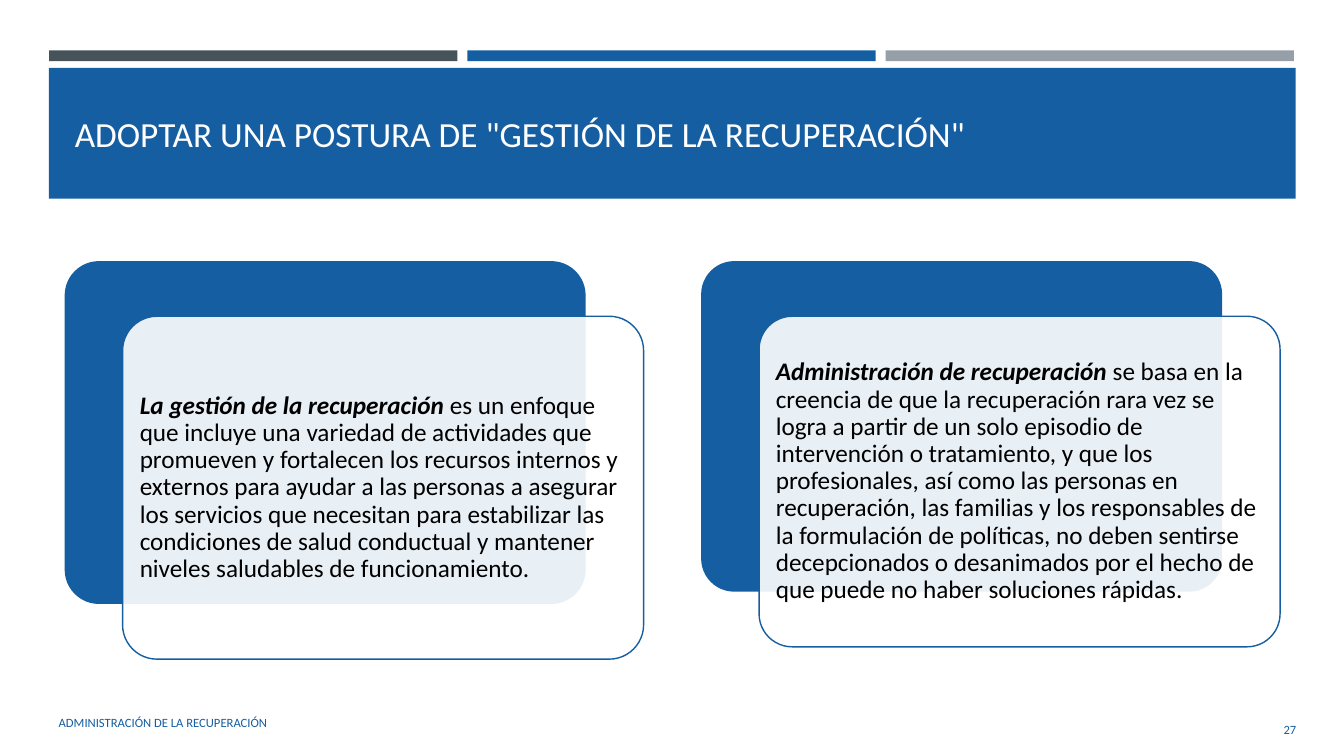
"""Builds the slide on adopting a recovery management stance."""
from lxml import etree
from pptx import Presentation
from pptx import util as u
from pptx.dml.color import RGBColor
from pptx.enum import shapes, text
from pptx.oxml.ns import qn

TITLE = 'ADOPTAR UNA POSTURA DE "GESTIÓN DE LA RECUPERACIÓN"'
FOOTER = "ADMINISTRACIÓN DE LA RECUPERACIÓN"
NUMBER = "27"
CARDS = [
    ("La gestión de la recuperación ",
     "es un enfoque que incluye una variedad de actividades que promueven y "
     "fortalecen los recursos internos y externos para ayudar a las personas a "
     "asegurar los servicios que necesitan para estabilizar las condiciones de "
     "salud conductual y mantener niveles saludables de funcionamiento.", 8.64),
    ("Administración de recuperación ",
     "se basa en la creencia de que la recuperación rara vez se logra a partir de "
     "un solo episodio de intervención o tratamiento, y que los profesionales, así "
     "como las personas en recuperación, las familias y los responsables de la "
     "formulación de políticas, no deben sentirse decepcionados o desanimados por "
     "el hecho de que puede no haber soluciones rápidas.", 8.33),
]
COLORS = {"blue": "155EA1", "slate": "465359", "gray": "969FA7",
          "white": "FFFFFF", "black": "000000"}
BARS = ["slate", "blue", "gray"]
BAR_LEFT, BAR_WIDTH, BAR_STEP = 1.24, 10.29, 10.54
CARD_LEFT, CARD_TOP, CARD_WIDTH, CARD_STEP = 1.63, 6.58, 13.13, 16.04
SHIFT_X, SHIFT_Y = 1.46, 1.39


def color(name):
    return RGBColor.from_string(COLORS[name])


def lengths(*values):
    return [u.Cm(value) for value in values]


def add_block(page, kind, place, fill):
    block = page.shapes.add_shape(kind, *lengths(*place))
    block.shadow.inherit = False
    block.fill.solid()
    block.fill.fore_color.rgb = color(fill)
    block.line.fill.background()
    return block


def write(box, spans, size=18, ink="black", align=text.PP_ALIGN.LEFT,
          spacing=1.0, margin=None):
    frame = box.text_frame
    frame.word_wrap = True
    frame.auto_size = text.MSO_AUTO_SIZE.NONE
    frame.vertical_anchor = text.MSO_ANCHOR.MIDDLE
    if margin is not None:
        frame.margin_left = frame.margin_right = u.Cm(margin)
        frame.margin_top = frame.margin_bottom = u.Cm(margin)
    para = frame.paragraphs[0]
    para.alignment = align
    para.line_spacing = spacing
    for words, strong in spans:
        span = para.add_run()
        span.text = words
        span.font.name = "Calibri"
        span.font.size = u.Pt(size)
        span.font.bold = span.font.italic = strong
        span.font.color.rgb = color(ink)


def add_card(page, index, lead, body, height):
    left = CARD_LEFT + index * CARD_STEP
    rounded = shapes.MSO_SHAPE.ROUNDED_RECTANGLE
    back = add_block(page, rounded, (left, CARD_TOP, CARD_WIDTH, height), "blue")
    front = add_block(page, rounded, (left + SHIFT_X, CARD_TOP + SHIFT_Y,
                                      CARD_WIDTH, height), "white")
    for block in (back, front):
        block.adjustments[0] = 0.1
    tint = front.element.spPr.find(qn("a:solidFill")).find(qn("a:srgbClr"))
    etree.SubElement(tint, qn("a:alpha")).set("val", "90000")
    front.line.color.rgb = color("blue")
    front.line.width = u.Pt(1)
    write(front, [(lead, True), (body, False)], spacing=0.9, margin=0.18)


def main():
    deck = Presentation()
    deck.slide_width, deck.slide_height = lengths(33.87, 19.05)
    page = deck.slides.add_slide(deck.slide_layouts[5])
    rectangle = shapes.MSO_SHAPE.RECTANGLE

    for index, fill in enumerate(BARS):
        add_block(page, rectangle,
                  (BAR_LEFT + index * BAR_STEP, 1.27, BAR_WIDTH, 0.27), fill)
    add_block(page, rectangle, (1.23, 1.71, 31.42, 3.3), "blue")

    title = page.shapes.title
    title.left, title.top, title.width, title.height = lengths(1.63, 1.96, 30.63, 2.82)
    title.element.getparent().append(title.element)
    write(title, [(TITLE, False)], size=25.2, ink="white")

    for index, card in enumerate(CARDS):
        add_card(page, index, *card)

    footer = page.shapes.add_textbox(*lengths(1.23, 17.7, 18.95, 1.02))
    write(footer, [(FOOTER, False)], size=9, ink="blue")
    number = page.shapes.add_textbox(*lengths(30, 17.86, 2.92, 1.02))
    write(number, [(NUMBER, False)], size=9, ink="blue", align=text.PP_ALIGN.RIGHT)

    deck.save("out.pptx")


if __name__ == "__main__":
    main()
